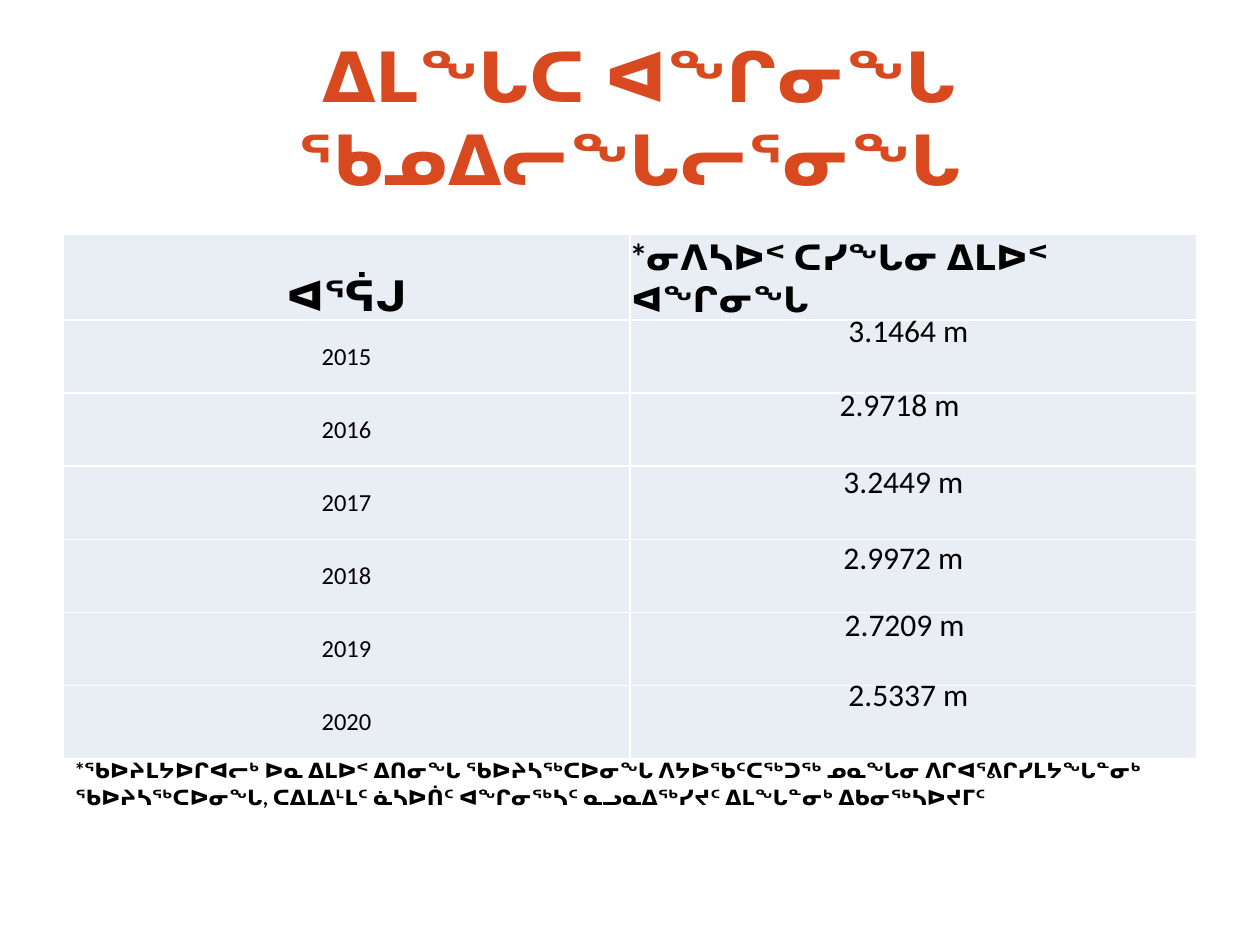
from lxml import etree
from pptx import Presentation
from pptx.dml.color import RGBColor
from pptx.enum.text import MSO_ANCHOR, MSO_AUTO_SIZE, PP_ALIGN
from pptx.oxml.ns import qn
from pptx.util import Inches, Pt

CENTER, LEFT = PP_ALIGN.CENTER, PP_ALIGN.LEFT
MIDDLE, BOTTOM = MSO_ANCHOR.MIDDLE, MSO_ANCHOR.BOTTOM
NO_FIT, GROW = MSO_AUTO_SIZE.NONE, MSO_AUTO_SIZE.SHAPE_TO_FIT_TEXT

ORANGE = RGBColor(0xD8, 0x49, 0x1F)
BLACK = RGBColor(0, 0, 0)
WHITE = RGBColor(0xFF, 0xFF, 0xFF)
PALE_BLUE = RGBColor(0xE9, 0xED, 0xF4)

TITLE = " ᐃᒪᖓᑕ ᐊᖏᓂᖓ ᖃᓄᐃᓕᖓᓕᕐᓂᖓ"
YEAR_HEADING = "ᐊᕐᕌᒍ"
DEPTH_HEADING = "*ᓂᐱᓴᐅᑉ ᑕᓯᖓᓂ ᐃᒪᐅᑉ ᐊᖏᓂᖓ"
FOOTNOTE = (
    "*ᖃᐅᔨᒪᔭᐅᒋᐊᓕᒃ ᐅᓇ ᐃᒪᐅᑉ ᐃᑎᓂᖓ ᖃᐅᔨᓴᖅᑕᐅᓂᖓ ᐱᔭᐅᖃᑦᑕᖅᑐᖅ ᓄᓇᖓᓂ "
    "ᐱᒋᐊᕐᕕᒋᓯᒪᔭᖓᓐᓂᒃ ᖃᐅᔨᓴᖅᑕᐅᓂᖓ, ᑕᐃᒪᐃᒻᒪᑦ ᓈᓴᐅᑏᑦ ᐊᖏᓂᖅᓴᑦ "
    "ᓇᓗᓇᐃᖅᓯᔪᑦ ᐃᒪᖓᓐᓂᒃ ᐃᑲᓂᖅᓴᐅᔪᒥᑦ"
)
# year, depth, left and top of the depth label
MEASUREMENTS = [
    (2015, "3.1464 m", 4.96, 2.42),
    (2016, "2.9718 m", 4.89, 3.01),
    (2017, "3.2449 m", 4.92, 3.62),
    (2018, "2.9972 m", 4.92, 4.22),
    (2019, "2.7209 m", 4.93, 4.75),
    (2020, "2.5337 m", 4.96, 5.31),
]


class SlideBuilder:
    def __init__(self, slide):
        self.slide = slide

    def fill_frame(self, frame, text, size, font, color=BLACK, bold=False,
                   align=CENTER):
        frame.word_wrap = True
        paragraph = frame.paragraphs[0]
        paragraph.text = text
        paragraph.alignment = align
        paragraph.font.size = Pt(size)
        paragraph.font.name = font
        paragraph.font.bold = bold
        paragraph.font.color.rgb = color
        return paragraph

    def title(self, text, left, top, width, height):
        shape = self.slide.shapes.title
        shape.left, shape.top = Inches(left), Inches(top)
        shape.width, shape.height = Inches(width), Inches(height)
        frame = shape.text_frame
        frame.auto_size = NO_FIT
        frame.vertical_anchor = MIDDLE
        self.fill_frame(frame, text, 39.6, "Arial", ORANGE, bold=True)

    def text(self, text, left, top, width, height, size, font, **style):
        box = self.slide.shapes.add_textbox(
            Inches(left), Inches(top), Inches(width), Inches(height))
        box.text_frame.auto_size = GROW
        return self.fill_frame(box.text_frame, text, size, font, **style)

    def table(self, left, top, column_width, row_heights, column_count):
        shape = self.slide.shapes.add_table(
            len(row_heights), column_count, Inches(left), Inches(top),
            Inches(column_width * column_count), Inches(sum(row_heights)))
        table = shape.table
        table.first_row = table.horz_banding = False
        for row, height in zip(table.rows, row_heights):
            row.height = Inches(height)
        for cell in table.iter_cells():
            self.borders(cell)
            cell.fill.solid()
            cell.fill.fore_color.rgb = PALE_BLUE
        return table

    def borders(self, cell):
        properties = cell._tc.get_or_add_tcPr()
        for side in ("a:lnL", "a:lnR", "a:lnT", "a:lnB"):
            line = etree.SubElement(properties, qn(side), w=str(Pt(1)))
            fill = etree.SubElement(line, qn("a:solidFill"))
            etree.SubElement(fill, qn("a:srgbClr"), val=str(WHITE))

    def cell(self, cell, text, size, font, anchor=MIDDLE, **style):
        cell.margin_left = cell.margin_right = cell.margin_top = Inches(0.01)
        cell.margin_bottom = 0
        cell.vertical_anchor = anchor
        self.fill_frame(cell.text_frame, text, size, font, **style)


def main():
    presentation = Presentation()
    presentation.slide_width, presentation.slide_height = Inches(10), Inches(7.5)
    slide = presentation.slides.add_slide(presentation.slide_layouts[5])
    builder = SlideBuilder(slide)

    builder.title(TITLE, 0.5, 0.3, 9, 1.25)

    row_heights = [0.5] + [0.58] * len(MEASUREMENTS)
    table = builder.table(0.5, 1.86, 4.5, row_heights, 2)
    builder.cell(table.cell(0, 0), YEAR_HEADING, 24, "Lato", BOTTOM, bold=True)
    builder.cell(table.cell(0, 1), DEPTH_HEADING, 20, "Lato", BOTTOM,
                 bold=True, align=LEFT)
    for row, (year, depth, left, top) in enumerate(MEASUREMENTS, start=1):
        builder.cell(table.cell(row, 0), str(year), 14, "Calibri")
        builder.text(depth, left, top, 4.5, 0.4, 18, "Calibri")

    footnote = builder.text(FOOTNOTE, 0.5, 5.95, 9.5, 0.52, 12, "Lato",
                            bold=True, align=LEFT)
    footnote.line_spacing = 1.07
    footnote.space_after = Pt(8)

    presentation.save("out.pptx")


if __name__ == "__main__":
    main()
